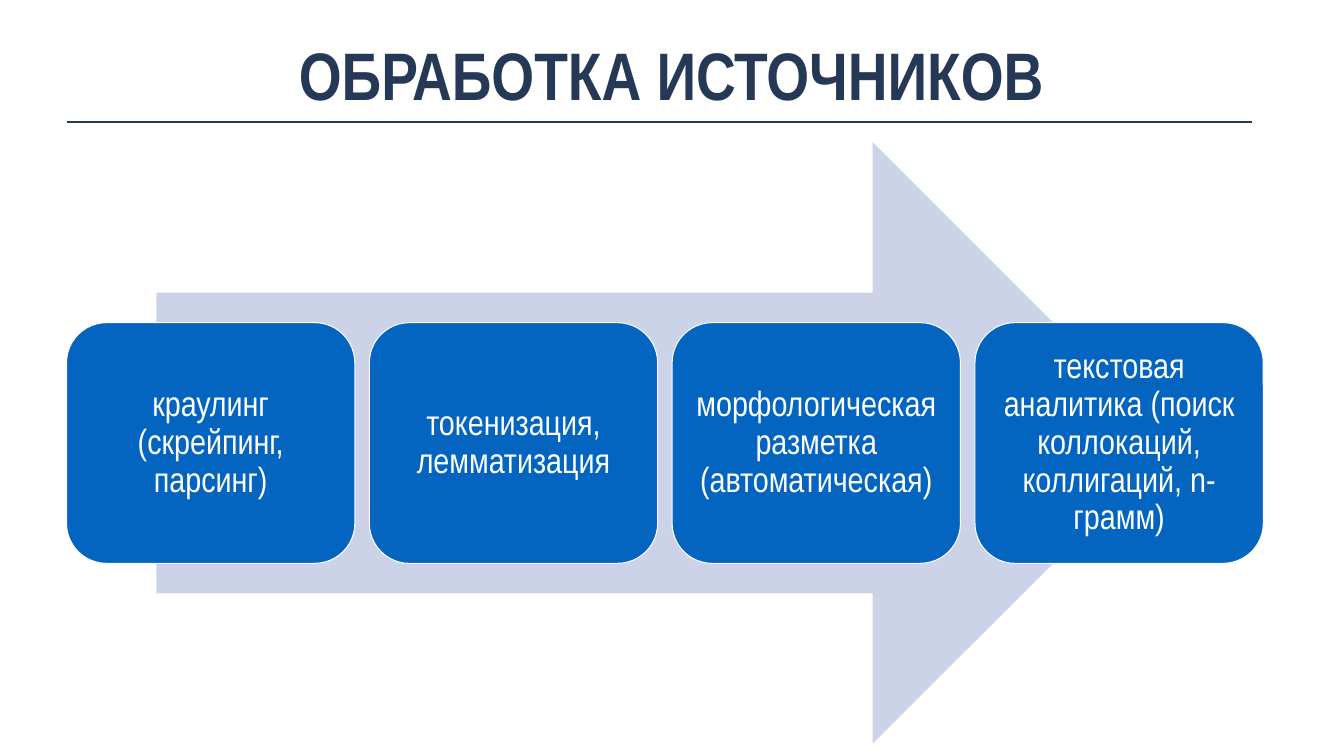
from lxml.etree import SubElement
from pptx import Presentation
from pptx.dml.color import RGBColor
from pptx.enum.shapes import MSO_CONNECTOR, MSO_SHAPE
from pptx.enum.text import MSO_ANCHOR, MSO_AUTO_SIZE, PP_ALIGN
from pptx.oxml.ns import qn
from pptx.util import Inches, Pt

COLORS = {"navy": "253957", "arrow": "CCD3E8", "step": "0365C0", "white": "FFFFFF"}
FONT = "Arial Narrow"
STEPS = [
    "краулинг (скрейпинг, парсинг)",
    "токенизация, лемматизация",
    "морфологическая разметка (автоматическая)",
    "текстовая аналитика (поиск коллокаций, коллигаций, n-грамм)",
]


def color(name):
    return RGBColor.from_string(COLORS[name])


def write_text(shape, text, size, color_name, anchor, inset, bold=False):
    frame = shape.text_frame
    frame.text = text
    frame.word_wrap = True
    frame.auto_size = MSO_AUTO_SIZE.NONE
    frame.vertical_anchor = anchor
    frame.margin_left = frame.margin_right = Inches(inset)
    frame.margin_top = frame.margin_bottom = Inches(inset)
    paragraph = frame.paragraphs[0]
    paragraph.alignment = PP_ALIGN.CENTER
    paragraph.font.name = FONT
    paragraph.font.size = Pt(size)
    paragraph.font.bold = bold
    paragraph.font.color.rgb = color(color_name)
    return paragraph


def add_block(slide, preset, left, top, width, height, fill):
    block = slide.shapes.add_shape(
        preset, Inches(left), Inches(top), Inches(width), Inches(height))
    block.shadow.inherit = False
    block.fill.solid()
    block.fill.fore_color.rgb = color(fill)
    block.line.fill.background()
    return block


def add_heading(slide, left, top, width, height):
    heading = slide.shapes.title
    heading.left, heading.top = Inches(left + 0.12), Inches(top)
    heading.width, heading.height = Inches(width), Inches(0.72)
    paragraph = write_text(heading, "ОБРАБОТКА ИСТОЧНИКОВ", 48, "navy",
                           MSO_ANCHOR.TOP, 0.04, bold=True)
    paragraph.line_spacing = 1.0
    paragraph.space_before = Pt(0)

    rule_y = Inches(top + height)
    rule = slide.shapes.add_connector(
        MSO_CONNECTOR.STRAIGHT, Inches(left), rule_y, Inches(left + width), rule_y)
    rule.line.color.rgb = color("navy")
    rule.line.width = Pt(1)
    SubElement(rule._element.spPr, qn("a:effectLst"))


def add_process(slide, left, top, width, height):
    step_width, step_height = 2.86, 0.4 * height
    pitch = (width - step_width) / (len(STEPS) - 1)
    arrow_width = 0.85 * width
    add_block(slide, MSO_SHAPE.RIGHT_ARROW, left + (width - arrow_width) / 2, top,
              arrow_width, height, "arrow")
    for index, step_text in enumerate(STEPS):
        step = add_block(slide, MSO_SHAPE.ROUNDED_RECTANGLE, left + index * pitch,
                         top + (height - step_height) / 2,
                         step_width, step_height, "step")
        step.line.color.rgb = color("white")
        step.line.width = Pt(0.75)
        paragraph = write_text(step, step_text, 25, "white", MSO_ANCHOR.MIDDLE, 0.1)
        paragraph.line_spacing = 0.9


def main():
    presentation = Presentation()
    presentation.slide_width = Inches(13.33)
    presentation.slide_height = Inches(7.5)
    slide = presentation.slides.add_slide(presentation.slide_layouts[5])
    add_heading(slide, 0.66, 0.29, 11.76, 0.92)
    add_process(slide, 0.66, 1.41, 11.87, 5.97)
    presentation.save("out.pptx")


if __name__ == "__main__":
    main()
